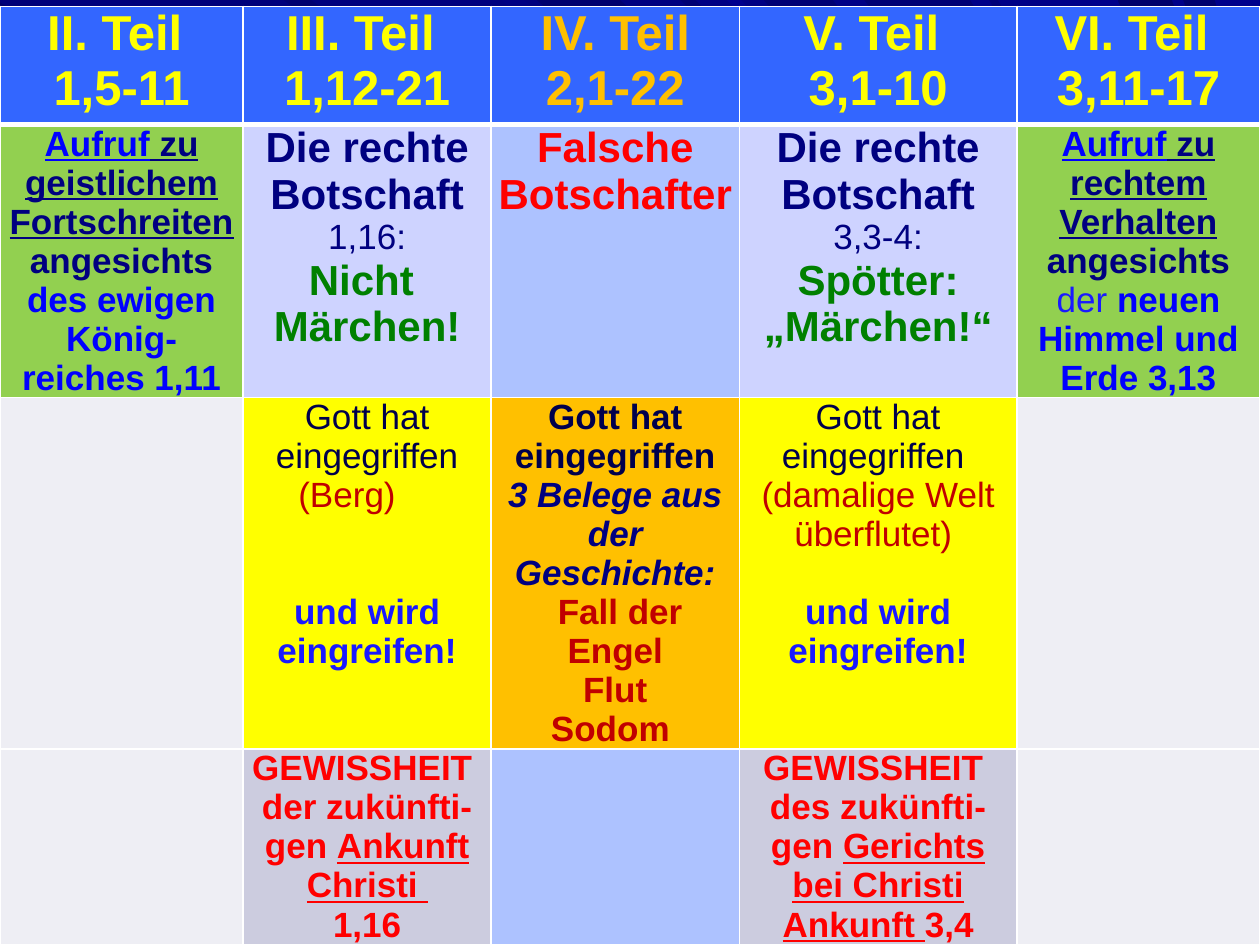
"""Build a slide with a five-column table comparing the parts of a letter."""
from lxml.etree import SubElement
from pptx import Presentation
from pptx.dml.color import RGBColor as Rgb
from pptx.enum.text import PP_ALIGN as Align
from pptx.oxml.ns import qn
from pptx.util import Pt

theme = {
    "font": "Arial",
    "back": ("000078", "000099"),
    "rule": "FFFFFF",
    "fills": [
        ["3366FF"] * 5,
        ["92D050", "CED3FF", "ADC2FF", "CED3FF", "92D050"],
        ["EEEEF4", "FFFF00", "FFC000", "FFFF00", "EEEEF4"],
        ["EEEEF4", "CCCCDF", "ADC2FF", "CCCCDF", "EEEEF4"],
    ],
    "rays": ["000069", "00007B", "000085", "000099", "000083", "00006D", "000073", "000073",
             "00006B", "00006D", "000070", "00008E", "000073", "000078", "000085", "00008A"],
    "ends": {0: "000099", 45: "000099", 90: "000080"},
    "size": {"head": 28, "big": 24, "body": 20},
    "ink": {
        "yellow": "FFFF00", "gold": "FFC000", "blue": "0000FF",
        "bright": "1A1AFF", "navy": "000080", "night": "00004C",
        "green": "008000", "red": "FF0000", "brick": "C00000",
    },
}


def run(text, ink, size="body", bold=True, italic=False, underline=False):
    form = {"name": theme["font"], "size": Pt(theme["size"][size]),
            "bold": bold, "italic": italic, "underline": underline}
    return text, theme["ink"][ink], form


def shade(fill, tints, angle):
    fill.gradient()
    fill.gradient_angle = (360 - angle) % 360
    for stop, tint in zip(fill.gradient_stops, tints):
        stop.color.rgb = Rgb.from_string(tint)


rays = [
    (0, [(400.3, 228.2), (0, 1.4), (0, 67), (380.9, 248.4), (720, 410.4), (720, 409.7)]),
    (45, [(415.4, 214.6), (72.7, 0), (18.7, 0), (405.4, 223.2), (720, 405.4), (720, 404.6)]),
    (0, [(0, 540), (38.9, 540), (452.2, 501.8), (452.2, 496.1), (0, 529.2)]),
    (0, [(534.2, 540), (576.7, 530.6), (544.3, 505.4), (262.1, 540)]),
    (45, [(286.6, 0), (679.7, 340.6), (681.8, 337.7), (299.5, 0)]),
    (45, [(306.7, 0), (684.7, 334.8), (697, 323.3), (354.2, 0)]),
    (45, [(388.8, 0), (703.4, 316.8), (397.4, 0)]),
    (90, [(436.3, 0), (709.2, 310.3), (710.6, 309.6), (475.9, 0)]),
    (90, [(638.6, 0), (700.6, 130.3), (709.9, 106.6), (669.6, 0)]),
    (90, [(694.1, 0), (676.1, 0), (712.1, 99.4), (719.3, 81.4)]),
    (45, [(162, 0), (719.3, 397.4), (719.3, 393.8), (177.8, 0)]),
    (45, [(415.4, 0), (719.3, 326.9), (719.3, 326.2), (423.4, 0)]),
    (90, [(554.4, 0), (493.9, 0), (719.3, 308.2), (719.3, 280.8)]),
    (45, [(565.2, 0), (719.3, 259.2), (719.3, 254.9), (570.2, 0)]),
    (45, [(586.8, 0), (719.3, 241.9), (719.3, 241.2), (593.3, 0)]),
    (45, [(719.3, 179.3), (627.8, 0), (622.8, 0), (719.3, 185.8)]),
]
heads = [("II. Teil ", "1,5-11"), ("III. Teil ", "1,12-21"), ("IV. Teil 2,1-22",),
         ("V. Teil ", "3,1-10"), ("VI. Teil ", "3,11-17")]
top = [[[run(text, "gold" if col == 2 else "yellow", "head")] for text in lines]
       for col, lines in enumerate(heads)]
right = [run("Die rechte Botschaft", "navy", "big")]
will = [run("und wird eingreifen!", "bright")]
sure = [run("GEWISSHEIT ", "red")]

rows = [
    top,
    [
        [[run("Aufruf", "blue", underline=True),
          run(" zu geistlichem Fortschreiten ", "navy", underline=True),
          run("angesichts ", "navy"),
          run("des ewigen König-reiches 1,11", "blue")]],
        [right, [run("1,16:", "navy", bold=False)],
         [run("Nicht ", "green", "big")], [run("Märchen!", "green", "big")]],
        [[run("Falsche Botschafter", "red", "big")]],
        [right, [run("3,3-4:", "navy", bold=False)],
         [run("Spötter: „Märchen!“", "green", "big")]],
        [[run("Aufruf", "blue", underline=True),
          run(" zu rechtem Verhalten ", "navy", underline=True),
          run("angesichts ", "navy"),
          run("der ", "bright", bold=False),
          run("neuen Himmel und Erde 3,13", "blue")]],
    ],
    [
        [],
        [[run("Gott hat eingegriffen", "night", bold=False)],
         [run("(Berg)", "brick", bold=False)], will],
        [[run("Gott hat eingegriffen", "night")],
         [run("3 Belege aus der Geschichte:", "navy", italic=True)],
         [run(" ", "night"), run("Fall der Engel", "brick")],
         [run("Flut", "brick")], [run("Sodom ", "brick")]],
        [[run("Gott hat eingegriffen ", "night", bold=False)],
         [run("(damalige Welt überflutet) ", "brick", bold=False)], will],
        [],
    ],
    [
        [],
        [sure, [run("der zukünfti-gen ", "red"),
                run("Ankunft Christi ", "red", underline=True)],
         [run("1,16", "red")]],
        [],
        [sure, [run("des zukünfti-gen ", "red"),
                run("Gerichts bei Christi Ankunft ", "red", underline=True),
                run("3,4", "red")]],
        [],
    ],
]
gaps = {(2, 1, 2): 44.6, (2, 3, 2): 22.3}
shifts = {(2, 1, 1): 23, (2, 1, 2): 0}
widths = [138.9, 141.8, 141.8, 158.6, 138.9]
heights = [67.5, 156, 200, 111]

deck = Presentation()
deck.slide_width, deck.slide_height = Pt(720), Pt(540)
slide = deck.slides.add_slide(deck.slide_layouts[6])
shade(slide.background.fill, theme["back"], 45)

for tint, (angle, spots) in zip(theme["rays"], rays):
    first, *rest = [(Pt(x), Pt(y)) for x, y in spots]
    pen = slide.shapes.build_freeform(*first)
    pen.add_line_segments(rest)
    ray = pen.convert_to_shape()
    ray.shadow.inherit = False
    ray.line.fill.background()
    shade(ray.fill, (tint, theme["ends"][angle]), angle)

table = slide.shapes.add_table(4, 5, Pt(0), Pt(3.6), Pt(720), Pt(sum(heights))).table
table.horz_banding = False
for col, width in zip(table.columns, widths):
    col.width = Pt(width)
for line, height in zip(table.rows, heights):
    line.height = Pt(height)

inset = {"margin_left": Pt(3.6), "margin_right": Pt(3.6),
         "margin_top": Pt(0), "margin_bottom": Pt(0)}
for r, cells in enumerate(rows):
    for c, paras in enumerate(cells):
        cell = table.cell(r, c)
        for key, value in inset.items():
            setattr(cell, key, value)
        for side in "LRB" if r == 1 else "LRTB":
            width = Pt(3 if (r, side) == (0, "B") else 1)
            edge = SubElement(cell._tc.get_or_add_tcPr(), qn("a:ln" + side), w=str(width))
            fill = SubElement(edge, qn("a:solidFill"))
            SubElement(fill, qn("a:srgbClr"), val=theme["rule"])
        cell.fill.solid()
        cell.fill.fore_color.rgb = Rgb.from_string(theme["fills"][r][c])
        for p, runs in enumerate(paras):
            frame = cell.text_frame
            para = frame.add_paragraph() if p else frame.paragraphs[0]
            para.alignment = Align.CENTER
            if (r, c, p) in gaps:
                para.space_before = Pt(gaps[r, c, p])
            if (r, c, p) in shifts:
                para._p.get_or_add_pPr().set("marR", str(Pt(shifts[r, c, p])))
            for text, ink, form in runs:
                part = para.add_run()
                part.text = text
                part.font.color.rgb = Rgb.from_string(ink)
                for key, value in form.items():
                    setattr(part.font, key, value)

deck.save("out.pptx")
